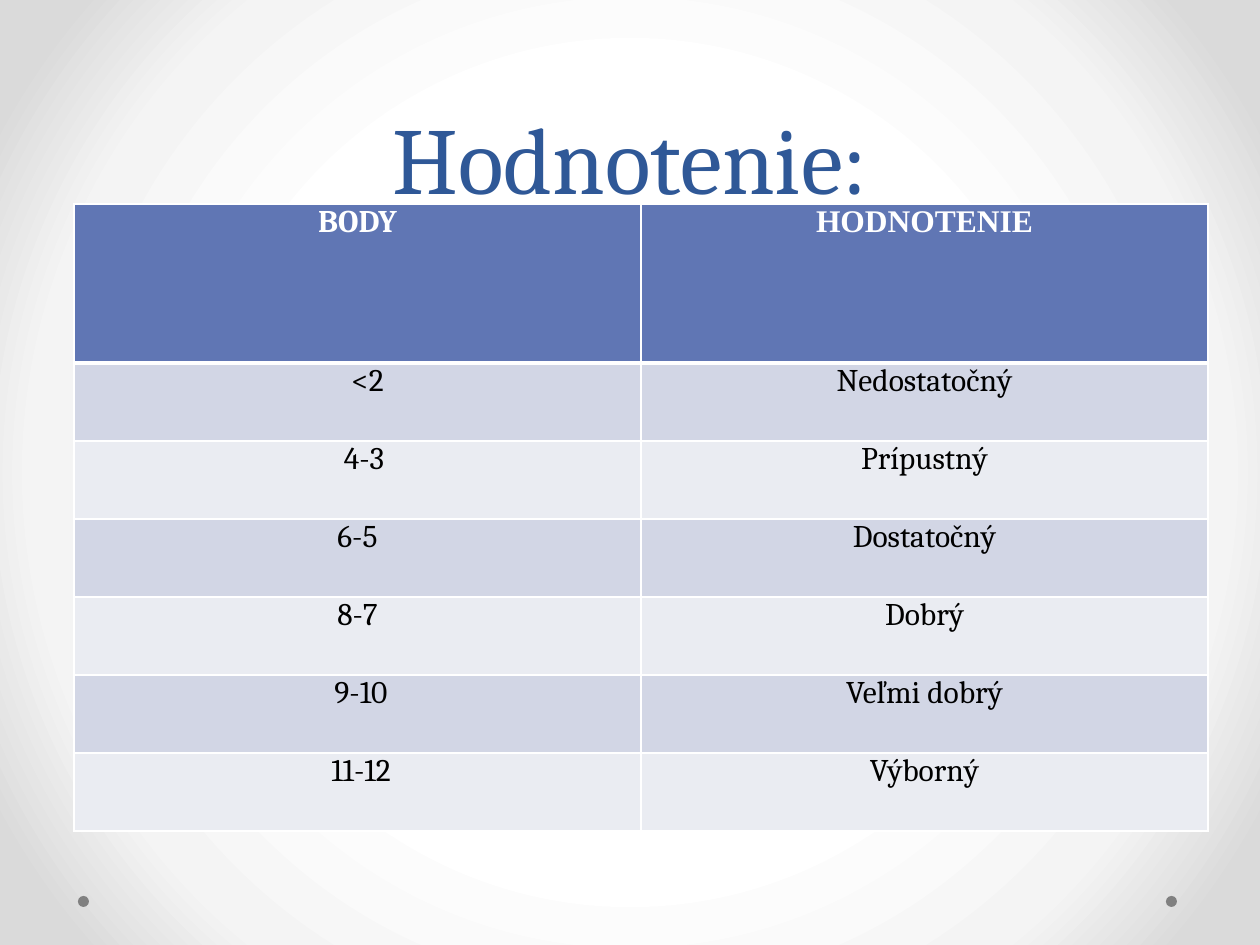
from pptx import Presentation
from pptx.dml.color import RGBColor
from pptx.enum.shapes import MSO_SHAPE
from pptx.enum.text import MSO_ANCHOR, PP_ALIGN
from pptx.oxml import parse_xml
from pptx.oxml.ns import nsdecls
from pptx.util import Emu, Pt

CENTER = PP_ALIGN.CENTER
BOTTOM = MSO_ANCHOR.BOTTOM
OVAL = MSO_SHAPE.OVAL

COLORS = {
    "title": "2F5897",
    "dot": "808080",
    "header": "6076B4",
    "band_dark": "D2D6E5",
    "band_light": "EAECF2",
    "white": "FFFFFF",
    "black": "000000",
}
BACKGROUND_STOPS = [(50, "FFFFFF"), (76, "F4F4F4"), (92, "DADADA")]

HEADERS = [("BODY", "Cambria"), ("HODNOTENIE", "Times New Roman")]
# Points, grade, extra left indent of the points in px
GRADES = [
    ("<2", "Nedostatočný", 20),
    ("4-3", "Prípustný", 13),
    ("6-5", "Dostatočný", 0),
    ("8-7", "Dobrý", 0),
    ("9-10", "Veľmi dobrý", 7),
    ("11-12", "Výborný", 7),
]
HEADER_HEIGHT, ROW_HEIGHT, COLUMN_WIDTH = 159, 78, 567
CELL_MARGIN = 9


def px(n):
    return Emu(round(n * 914400 / 126))


def rgb(name):
    return RGBColor.from_string(COLORS[name])


def set_text(tf, text, size, color, font="Cambria", bold=False):
    p = tf.paragraphs[0]
    p.text = text
    p.alignment = CENTER
    r = p.runs[0]
    r.font.size = Pt(size)
    r.font.name = font
    r.font.bold = bold
    r.font.color.rgb = rgb(color)
    return p


def set_background(s):
    stops = "".join(
        f'<a:gs pos="{pos * 1000}"><a:srgbClr val="{color}"/></a:gs>'
        for pos, color in BACKGROUND_STOPS
    )
    s.background.fill.solid()
    fill = s.background.fill._xPr.find(
        "{http://schemas.openxmlformats.org/drawingml/2006/main}solidFill")
    gradient = parse_xml(
        f'<a:gradFill {nsdecls("a")} rotWithShape="1"><a:gsLst>{stops}</a:gsLst>'
        '<a:path path="circle">'
        '<a:fillToRect l="50000" t="50000" r="50000" b="50000"/>'
        '</a:path></a:gradFill>')
    fill.getparent().replace(fill, gradient)


def add_dot(s, x, y):
    sp = s.shapes.add_shape(OVAL, px(x), px(y), px(11), px(11))
    sp.shadow.inherit = False
    sp.fill.solid()
    sp.fill.fore_color.rgb = rgb("dot")
    sp.line.fill.background()


def add_title(s, text):
    tf = s.shapes.add_textbox(px(63), px(0), px(1134), px(220)).text_frame
    tf.word_wrap = True
    tf.vertical_anchor = BOTTOM
    p = set_text(tf, text, 54, "title")
    p.line_spacing = Pt(58)


def set_borders(cell, bottom, top):
    tcPr = cell._tc.get_or_add_tcPr()
    widths = {"lnL": 1, "lnR": 1, "lnT": top, "lnB": bottom}
    for i, (tag, width) in enumerate(widths.items()):
        tcPr.insert(i, parse_xml(
            f'<a:{tag} {nsdecls("a")} w="{Pt(width)}"><a:solidFill>'
            f'<a:srgbClr val="{COLORS["white"]}"/></a:solidFill></a:{tag}>'))


def fill_cell(cell, text, fill, color, font="Cambria", bold=False,
              indent=0, top=1, bottom=1):
    cell.margin_left = px(CELL_MARGIN + indent)
    cell.margin_right = px(CELL_MARGIN)
    cell.margin_top = cell.margin_bottom = 0
    cell.fill.solid()
    cell.fill.fore_color.rgb = rgb(fill)
    set_text(cell.text_frame, text, 18, color, font, bold)
    set_borders(cell, bottom, top)


def add_grade_table(s):
    rows, cols = len(GRADES) + 1, len(HEADERS)
    height = HEADER_HEIGHT + ROW_HEIGHT * len(GRADES)
    table = s.shapes.add_table(rows, cols, px(74), px(204),
                               px(COLUMN_WIDTH * cols), px(height)).table
    for column in table.columns:
        column.width = px(COLUMN_WIDTH)
    for i, row in enumerate(table.rows):
        row.height = px(ROW_HEIGHT if i else HEADER_HEIGHT)

    # Header row
    for c, (text, font) in enumerate(HEADERS):
        fill_cell(table.cell(0, c), text, "header", "white", font,
                  bold=True, bottom=3)

    # Banded grade rows
    for i, (points, grade, indent) in enumerate(GRADES, start=1):
        band = "band_dark" if i % 2 else "band_light"
        top = 3 if i == 1 else 1
        fill_cell(table.cell(i, 0), points, band, "black", indent=indent, top=top)
        fill_cell(table.cell(i, 1), grade, band, "black", top=top)


def main():
    prs = Presentation()
    prs.slide_width, prs.slide_height = px(1260), px(945)
    s = prs.slides.add_slide(prs.slide_layouts[6])
    set_background(s)
    for x in (1166, 78):
        add_dot(s, x, 896)
    add_title(s, "Hodnotenie:")
    add_grade_table(s)
    prs.save("out.pptx")


if __name__ == "__main__":
    main()
